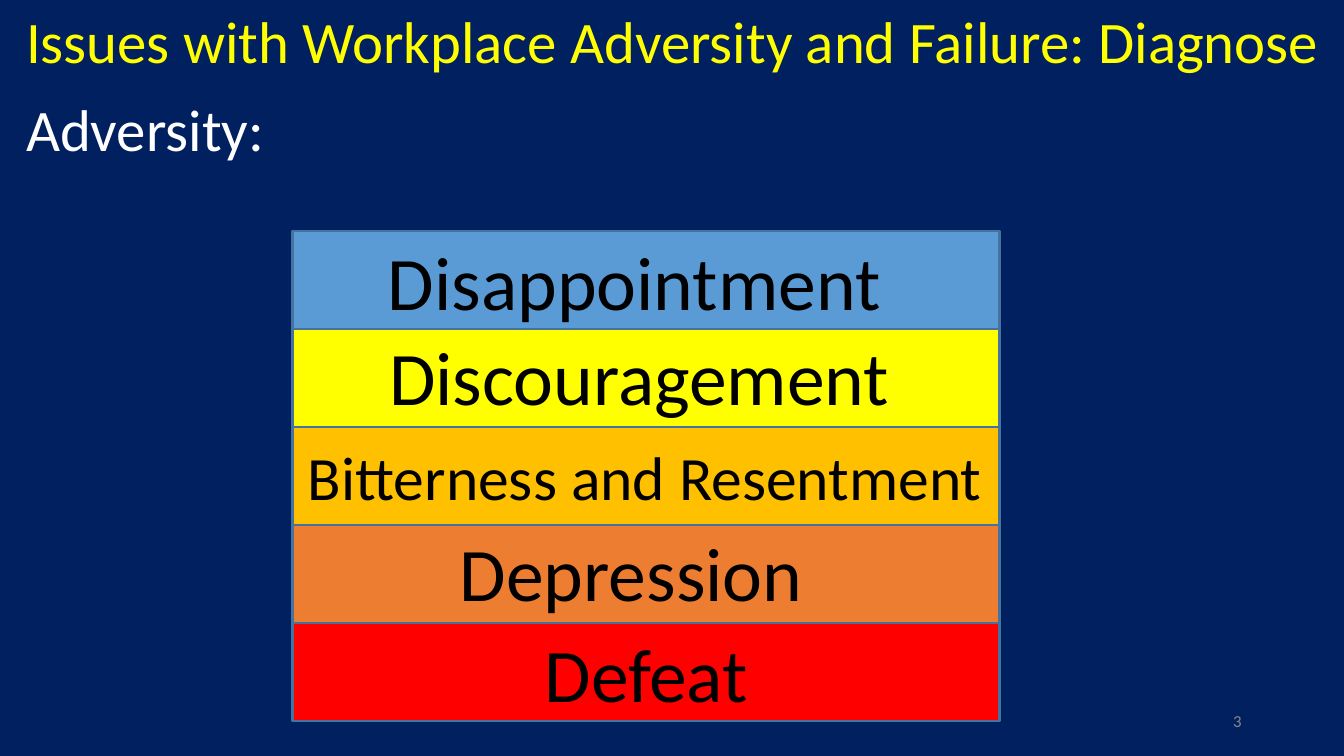
import pptx
import pptx.util
import pptx.dml.color
import pptx.enum.shapes
import pptx.enum.text

Pt = pptx.util.Pt
ALIGN = pptx.enum.text.PP_ALIGN
ANCHOR = pptx.enum.text.MSO_ANCHOR

COLORS = {
    "navy": "002060", "yellow": "FFFF00", "white": "FFFFFF",
    "black": "000000", "gray": "888888", "outline": "43739E",
    "blue": "5B9BD5", "amber": "FFC000", "orange": "ED7D31", "red": "FF0000",
}
TITLE = "Issues with Workplace Adversity and Failure: Diagnose"
SUBTITLE = "Adversity:"
PAGE = "3"
STAGES = [
    {"text": "Disappointment", "fill": "blue", "size": 54, "left": 68},
    {"text": "Discouragement", "fill": "yellow", "size": 54, "left": 69, "bottom": 4},
    {"text": "Bitterness and Resentment", "fill": "amber", "size": 44, "left": 11},
    {"text": "Depression", "fill": "orange", "size": 54, "left": 119.5, "bottom": 4},
    {"text": "Defeat", "fill": "red", "size": 54, "align": ALIGN.CENTER},
]
BAR_LEFT, BAR_TOP, BAR_WIDTH, BAR_HEIGHT = 209, 165, 505, 70


def rgb(name):
    return pptx.dml.color.RGBColor.from_string(COLORS[name])


def write(p, text, size=42, color="black", align=ALIGN.LEFT, before=0):
    p.alignment = align
    p.space_before = Pt(before)
    r = p.add_run()
    r.text = text
    r.font.name = "Calibri"
    r.font.size = Pt(size)
    r.font.color.rgb = rgb(color)


def add_box(s, left, top, width, height):
    tf = s.shapes.add_textbox(Pt(left), Pt(top), Pt(width), Pt(height)).text_frame
    tf.word_wrap = True
    return tf


def add_bar(s, index, stage):
    sp = s.shapes.add_shape(
        pptx.enum.shapes.MSO_SHAPE.RECTANGLE,
        Pt(BAR_LEFT), Pt(BAR_TOP + index * BAR_HEIGHT), Pt(BAR_WIDTH), Pt(BAR_HEIGHT))
    sp.shadow.inherit = False
    sp.fill.solid()
    sp.fill.fore_color.rgb = rgb(stage["fill"])
    sp.line.color.rgb = rgb("outline")
    sp.line.width = Pt(2)
    tf = sp.text_frame
    tf.word_wrap = True
    tf.vertical_anchor = ANCHOR.MIDDLE
    tf.margin_left = Pt(stage.get("left", 0))
    tf.margin_right = tf.margin_top = Pt(0)
    tf.margin_bottom = Pt(stage.get("bottom", 0))
    write(tf.paragraphs[0], stage["text"], size=stage["size"],
          align=stage.get("align", ALIGN.LEFT))


def main():
    prs = pptx.Presentation()
    prs.slide_width, prs.slide_height = Pt(960), Pt(540)
    s = prs.slides.add_slide(prs.slide_layouts[6])
    s.background.fill.solid()
    s.background.fill.fore_color.rgb = rgb("navy")

    tf = add_box(s, 11.5, 0, 948, 124)
    write(tf.paragraphs[0], TITLE, color="yellow")
    write(tf.add_paragraph(), SUBTITLE, color="white", before=12)

    for index, stage in enumerate(STAGES):
        add_bar(s, index, stage)

    tf = add_box(s, 678, 500.5, 216, 28.8)
    tf.vertical_anchor = ANCHOR.MIDDLE
    write(tf.paragraphs[0], PAGE, size=12, color="gray", align=ALIGN.RIGHT)

    prs.save("out.pptx")


if __name__ == "__main__":
    main()
